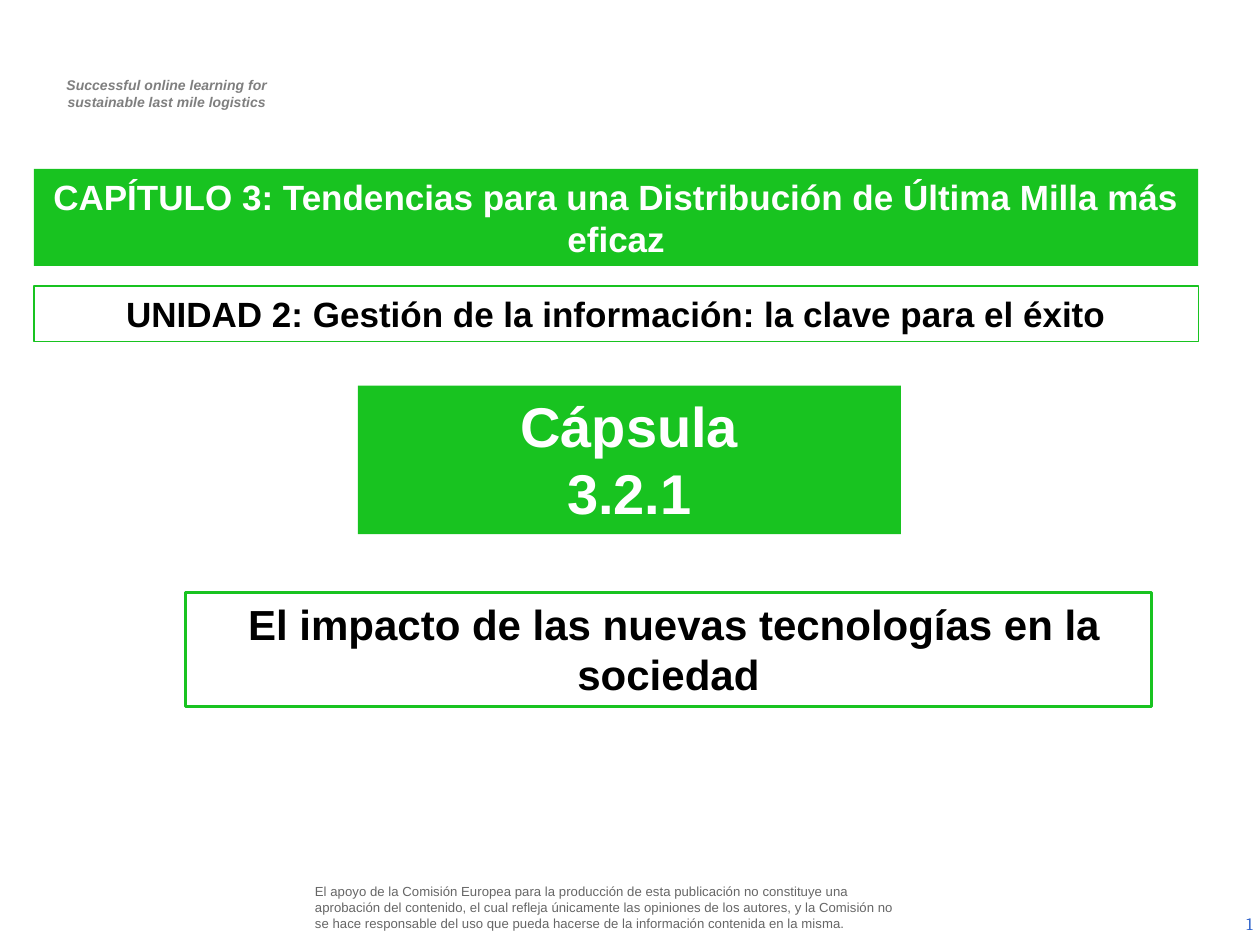
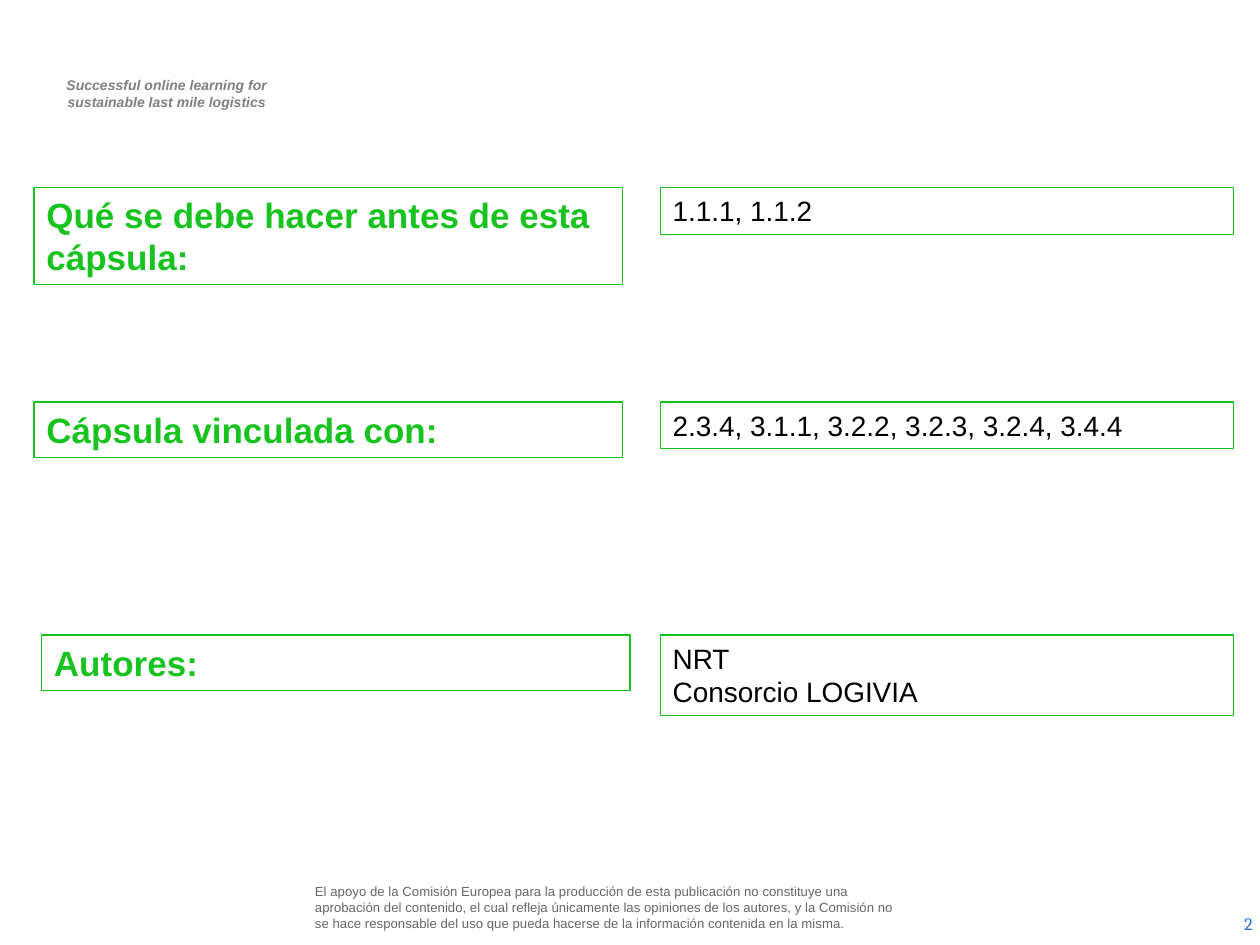
from pptx import Presentation
from pptx.dml.color import RGBColor
from pptx.enum.shapes import MSO_SHAPE
from pptx.enum.text import MSO_ANCHOR, MSO_AUTO_SIZE, PP_ALIGN
from pptx.oxml.ns import qn
from pptx.util import Inches, Pt

GREEN, WHITE, BLACK = "18C320", "FFFFFF", "000000"
TAGLINE_GREY, NOTICE_GREY, NUMBER_BLUE = "7F7F7F", "666666", "3366CC"
TITLE_ONLY, BLANK = 5, 6
TAGLINE = ["Successful online learning for", "sustainable last mile logistics"]
NOTICE = ("El apoyo de la Comisión Europea para la producción de esta publicación "
          "no constituye una aprobación del contenido, el cual refleja únicamente las "
          "opiniones de los autores, y la Comisión no se hace responsable del uso que "
          "pueda hacerse de la información contenida en la misma.")
LABEL_WIDTH, VALUE_LEFT, VALUE_WIDTH = 4.67, 5.24, 4.55
CAPSULE_ROWS = [
    (0.27, 1.49, 0.77, "Qué se debe hacer antes de esta cápsula:", 0.37, ["1.1.1, 1.1.2"]),
    (0.27, 3.19, 0.44, "Cápsula vinculada con:", 0.37,
     ["2.3.4, 3.1.1, 3.2.2, 3.2.3, 3.2.4, 3.4.4"]),
    (0.33, 5.04, 0.44, "Autores:", 0.64, ["NRT", "Consorcio LOGIVIA"]),
]


def rgb(value):
    """Turn a hex string into a colour."""
    return RGBColor.from_string(value)


def style_font(font, size, color, bold=False, italic=False, name="Arial"):
    """Set the look of a paragraph or run font."""
    font.name, font.size = name, Pt(size)
    font.bold, font.italic = bold, italic
    font.color.rgb = rgb(color)


def write(sp, lines, size, color, bold=False, italic=False, align=PP_ALIGN.LEFT,
          anchor=MSO_ANCHOR.TOP, inset=(0.1, 0.05), left_indent=0, first_indent=0):
    """Fill a shape with one paragraph per line."""
    tf = sp.text_frame
    tf.word_wrap, tf.auto_size = True, MSO_AUTO_SIZE.NONE
    tf.vertical_anchor = anchor
    tf.margin_left = tf.margin_right = Inches(inset[0])
    tf.margin_top = tf.margin_bottom = Inches(inset[1])
    tf.text = "\n".join(lines)
    for p in tf.paragraphs:
        p.alignment = align
        pPr = p._p.get_or_add_pPr()
        pPr.set("marL", str(Inches(left_indent)))
        pPr.set("indent", str(Inches(first_indent)))
        style_font(p.font, size, color, bold, italic)


def place(sp, box):
    """Move a shape to a box given in inches."""
    sp.left, sp.top, sp.width, sp.height = map(Inches, box)


def paint(sp, fill=None, line=None, line_width=0.75):
    """Set the fill and outline of a shape."""
    if fill:
        sp.fill.solid()
        sp.fill.fore_color.rgb = rgb(fill)
    else:
        sp.fill.background()
    if line:
        sp.line.color.rgb = rgb(line)
        sp.line.width = Pt(line_width)
    else:
        sp.line.fill.background()


def add_panel(slide, box, lines, size, color, fill=None, line=None, **text):
    """Add a rectangle with text."""
    sp = slide.shapes.add_shape(MSO_SHAPE.RECTANGLE, *map(Inches, box))
    sp.shadow.inherit = False
    paint(sp, fill, line)
    write(sp, lines, size, color, **text)


def add_text(slide, box, lines, size, color, **text):
    """Add a plain text box."""
    write(slide.shapes.add_textbox(*map(Inches, box)), lines, size, color, **text)


def add_slide_number(slide, box, number):
    """Add a right-aligned slide number field."""
    tf = slide.shapes.add_textbox(*map(Inches, box)).text_frame
    tf.word_wrap, tf.vertical_anchor = True, MSO_ANCHOR.MIDDLE
    p = tf.paragraphs[0]
    p.alignment = PP_ALIGN.RIGHT
    r = p.add_run()
    r.text = str(number)
    style_font(r.font, 10, NUMBER_BLUE, name="Cambria")
    field = r._r
    field.tag = qn("a:fld")
    field.set("id", "{B6F15528-21DE-4FAA-801E-634DDDAF4B2B}")
    field.set("type", "slidenum")


def new_slide(prs, layout):
    """Add a slide with the shared tagline, notice and number."""
    slide = prs.slides.add_slide(prs.slide_layouts[layout])
    add_text(slide, (0.29, 0.56, 2.03, 0.37), TAGLINE, 8, TAGLINE_GREY, bold=True,
             italic=True, align=PP_ALIGN.CENTER, left_indent=0.04)
    add_text(slide, (2.46, 6.95, 4.73, 0.5), [NOTICE], 7.5, NOTICE_GREY,
             anchor=MSO_ANCHOR.MIDDLE, inset=(0.04, 0.04))
    add_slide_number(slide, (7.71, 7.13, 2.33, 0.4), len(prs.slides))
    return slide


def add_title(slide, box, text):
    """Format the title placeholder as an outlined panel."""
    sp = slide.shapes.title
    place(sp, box)
    paint(sp, line=GREEN, line_width=1.5)
    write(sp, [text], 24, BLACK, bold=True, align=PP_ALIGN.CENTER, first_indent=0.09)


def add_heading_bands(slide, left, top, width):
    """Stack the chapter and unit bands."""
    centred = dict(bold=True, align=PP_ALIGN.CENTER)
    add_panel(slide, (left, top, width, 0.77),
              ["CAPÍTULO 3: Tendencias para una Distribución de Última Milla más eficaz"],
              20, WHITE, fill=GREEN, **centred)
    add_panel(slide, (left, top + 0.93, width, 0.44),
              ["UNIDAD 2: Gestión de la información: la clave para el éxito"],
              20, BLACK, line=GREEN, **centred)


def build_cover(prs):
    """Build the capsule cover."""
    slide = new_slide(prs, TITLE_ONLY)
    add_heading_bands(slide, 0.27, 1.34, 9.24)
    add_panel(slide, (2.84, 3.06, 4.31, 1.18), ["Cápsula", "3.2.1"], 32, WHITE,
              fill=GREEN, bold=True, align=PP_ALIGN.CENTER)
    add_title(slide, (1.47, 4.7, 7.67, 0.91),
              "El impacto de las nuevas tecnologías en la sociedad")


def build_capsule_details(prs):
    """Build the rows of labels and values about the capsule."""
    slide = new_slide(prs, BLANK)
    for left, top, label_height, label, value_height, values in CAPSULE_ROWS:
        add_panel(slide, (left, top, LABEL_WIDTH, label_height), [label], 20, GREEN,
                  fill=WHITE, line=GREEN, bold=True)
        add_panel(slide, (VALUE_LEFT, top, VALUE_WIDTH, value_height), values, 16, BLACK,
                  fill=WHITE, line=GREEN)


def main():
    """Build and save the presentation."""
    prs = Presentation()
    prs.slide_width, prs.slide_height = Inches(10), Inches(7.5)
    build_cover(prs)
    build_capsule_details(prs)
    prs.save("out.pptx")


if __name__ == "__main__":
    main()
